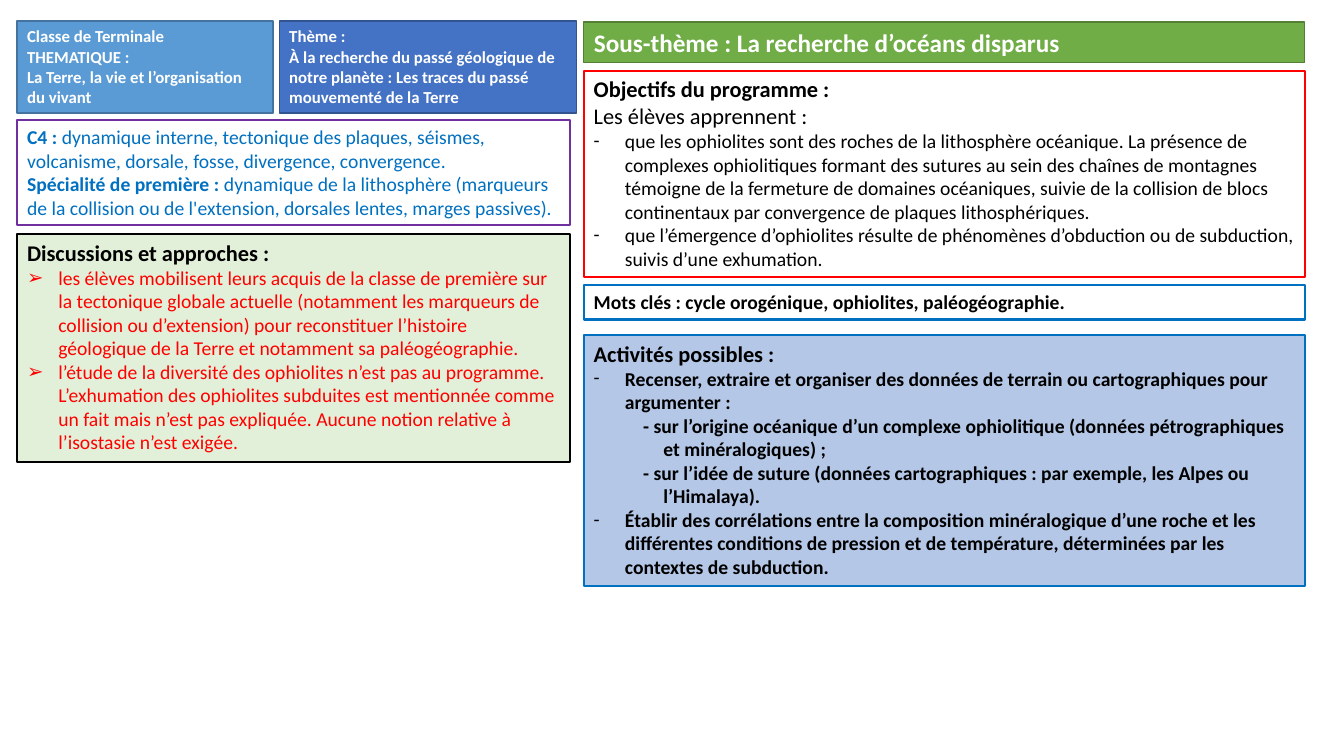
from lxml import etree
from pptx import Presentation
from pptx import util as u
from pptx.dml.color import RGBColor
from pptx.enum import shapes, text
from pptx.oxml.ns import qn

COLORS = {
    "white": "FFFFFF", "black": "000000", "red": "FF0000", "blue": "0070C0",
    "sky": "5B9BD5", "sky_edge": "43739E", "royal": "4472C4", "royal_edge": "325491",
    "green": "70AD47", "green_edge": "538035", "purple": "7030A0",
    "pale_green": "E2F0D9", "pale_blue": "B4C7E7",
}

# Two columns: left edge and width in inches; the left one is split for the header
LEFT, RIGHT = (0.17, 5.48), (5.79, 7.15)
CLASS_COL, THEME_COL = (0.17, 2.54), (2.77, 2.95)

# Paragraph kinds: left margin, hanging indent, bullet, alignment
PARAGRAPHS = {
    "plain": (0, 0, None, text.PP_ALIGN.LEFT),
    "justified": (0, 0, None, text.PP_ALIGN.JUSTIFY),
    "dash": (0.31, -0.31, "-", text.PP_ALIGN.LEFT),
    "arrow": (0.31, -0.31, "➢", text.PP_ALIGN.LEFT),
    "sub": (0.69, -0.2, None, text.PP_ALIGN.LEFT),
}

# Run formats: size, bold, colour
RUNS = {
    "title": (18, True, "white"),
    "header": (12, True, "white"),
    "heading": (16, True, "black"),
    "intro": (16, False, "black"),
    "body": (14, False, "black"),
    "strong": (14, True, "black"),
    "approach": (14, False, "red"),
    "level": (14, True, "blue"),
    "notion": (14, False, "blue"),
}


def rgb(name):
    return RGBColor.from_string(COLORS[name])


def add_run(paragraph, style, words):
    size, bold, color = RUNS[style]
    run = paragraph.add_run()
    run.text = words
    formats = {"name": "Calibri", "size": u.Pt(size), "bold": bold}
    for key, value in formats.items():
        setattr(run.font, key, value)
    run.font.color.rgb = rgb(color)


def format_paragraph(paragraph, kind):
    margin, indent, bullet, alignment = PARAGRAPHS[kind]
    formats = {"alignment": alignment, "line_spacing": 1.0,
               "space_before": u.Pt(0), "space_after": u.Pt(0)}
    for key, value in formats.items():
        setattr(paragraph, key, value)
    props = paragraph._p.get_or_add_pPr()
    props.set("marL", str(u.Inches(margin)))
    props.set("indent", str(u.Inches(indent)))
    if bullet:
        etree.SubElement(props, qn("a:buFont")).set("typeface", "Calibri")
        etree.SubElement(props, qn("a:buChar")).set("char", bullet)


def fill_panel(panel, fill, edge, weight, paragraphs):
    """Paint a panel and write its paragraphs: (kind, (style, words), ...)."""
    if fill:
        panel.fill.solid()
        panel.fill.fore_color.rgb = rgb(fill)
    else:
        panel.fill.background()
    panel.line.color.rgb = rgb(edge)
    panel.line.width = u.Pt(weight)
    frame = panel.text_frame
    formats = {"word_wrap": True, "auto_size": text.MSO_AUTO_SIZE.NONE,
               "vertical_anchor": text.MSO_ANCHOR.TOP}
    for key, value in formats.items():
        setattr(frame, key, value)
    for index, (kind, *runs) in enumerate(paragraphs):
        paragraph = frame.add_paragraph() if index else frame.paragraphs[0]
        format_paragraph(paragraph, kind)
        for style, words in runs:
            add_run(paragraph, style, words)


def add_panel(slide, column, top, height, fill, edge, weight, paragraphs):
    left, width = column
    panel = slide.shapes.add_shape(shapes.MSO_SHAPE.RECTANGLE, u.Inches(left),
                                   u.Inches(top), u.Inches(width), u.Inches(height))
    panel.shadow.inherit = False
    fill_panel(panel, fill, edge, weight, paragraphs)


def set_title(slide, column, top, height, fill, edge, weight, paragraphs):
    title = slide.shapes.title
    box = {"left": column[0], "top": top, "width": column[1], "height": height}
    for key, value in box.items():
        setattr(title, key, u.Inches(value))
    fill_panel(title, fill, edge, weight, paragraphs)


def main():
    deck = Presentation()
    deck.slide_width, deck.slide_height = u.Inches(13.33), u.Inches(7.5)
    slide = deck.slides.add_slide(deck.slide_layouts[5])

    # Header: class, theme, sub-theme
    add_panel(slide, CLASS_COL, 0.21, 0.91, "sky", "sky_edge", 1, [
        ("plain", ("header", "Classe de Terminale")),
        ("plain", ("header", "THEMATIQUE :")),
        ("plain", ("header", "La Terre, la vie et l’organisation du vivant")),
    ])
    add_panel(slide, THEME_COL, 0.21, 0.91, "royal", "royal_edge", 1, [
        ("plain", ("header", "Thème :")),
        ("plain", ("header", "À la recherche du passé géologique de notre planète : "
                             "Les traces du passé mouvementé de la Terre")),
    ])
    set_title(slide, RIGHT, 0.22, 0.4, "green", "green_edge", 1, [
        ("plain", ("title", "Sous-thème : La recherche d’océans disparus")),
    ])

    # Left column: prior knowledge, approaches
    add_panel(slide, LEFT, 1.19, 1.04, None, "purple", 1.5, [
        ("plain", ("level", "C4 : "),
         ("notion", "dynamique interne, tectonique des plaques, séismes, volcanisme, "
                    "dorsale, fosse, divergence, convergence.")),
        ("plain", ("level", "Spécialité de première : "),
         ("notion", "dynamique de la lithosphère (marqueurs de la collision ou de "
                    "l'extension, dorsales lentes, marges passives).")),
    ])
    add_panel(slide, LEFT, 2.32, 2.26, "pale_green", "black", 1.5, [
        ("plain", ("heading", "Discussions et approches :")),
        ("arrow", ("approach", "les élèves mobilisent leurs acquis de la classe de première "
                               "sur la tectonique globale actuelle (notamment les marqueurs "
                               "de collision ou d’extension) pour reconstituer l’histoire "
                               "géologique de la Terre et notamment sa paléogéographie.")),
        ("arrow", ("approach", "l’étude de la diversité des ophiolites n’est pas au programme. "
                               "L’exhumation des ophiolites subduites est mentionnée comme un "
                               "fait mais n’est pas expliquée. Aucune notion relative à "
                               "l’isostasie n’est exigée.")),
    ])

    # Right column: objectives, key words, activities
    add_panel(slide, RIGHT, 0.7, 2.05, None, "red", 1.5, [
        ("justified", ("heading", "Objectifs du programme :")),
        ("justified", ("intro", "Les élèves apprennent :")),
        ("dash", ("body", "que les ophiolites sont des roches de la lithosphère océanique. "
                          "La présence de complexes ophiolitiques formant des sutures au sein "
                          "des chaînes de montagnes témoigne de la fermeture de domaines "
                          "océaniques, suivie de la collision de blocs continentaux par "
                          "convergence de plaques lithosphériques.")),
        ("dash", ("body", "que l’émergence d’ophiolites résulte de phénomènes d’obduction ou "
                          "de subduction, suivis d’une exhumation.")),
    ])
    add_panel(slide, RIGHT, 2.83, 0.34, None, "blue", 1.5, [
        ("plain", ("strong", "Mots clés : cycle orogénique, ophiolites, paléogéographie.")),
    ])
    add_panel(slide, RIGHT, 3.32, 2.49, "pale_blue", "blue", 1.5, [
        ("plain", ("heading", "Activités possibles :")),
        ("dash", ("strong", "Recenser, extraire et organiser des données de terrain ou "
                            "cartographiques pour argumenter :")),
        ("sub", ("strong", "- sur l’origine océanique d’un complexe ophiolitique (données "
                           "pétrographiques et minéralogiques) ;")),
        ("sub", ("strong", "- sur l’idée de suture (données cartographiques : par exemple, "
                           "les Alpes ou l’Himalaya).")),
        ("dash", ("strong", "Établir des corrélations entre la composition minéralogique d’une "
                            "roche et les différentes conditions de pression et de température, "
                            "déterminées par les contextes de subduction.")),
    ])

    deck.save("out.pptx")


if __name__ == "__main__":
    main()
